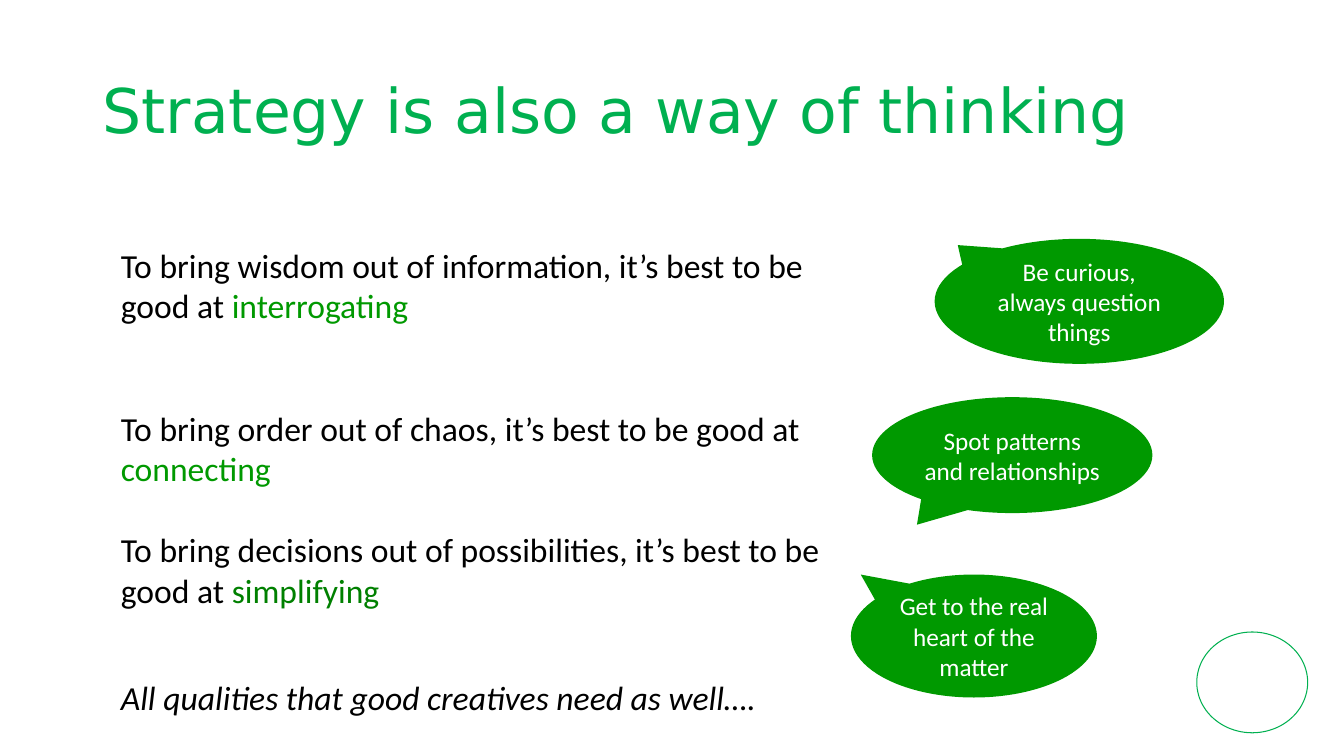
from dataclasses import dataclass

from pptx import Presentation
from pptx.dml.color import RGBColor
from pptx.enum.shapes import MSO_SHAPE as Shape
from pptx.enum.text import MSO_ANCHOR as Anchor, PP_ALIGN as Align
from pptx.util import Inches, Pt


@dataclass(frozen=True)
class Theme:
    title_green: str = "00B050"
    green: str = "009900"
    dark_green: str = "008000"
    black: str = "000000"
    white: str = "FFFFFF"
    title_font: str = "DejaVu Sans"
    body_font: str = "Calibri"
    title_size: int = 44
    body_size: int = 24
    callout_size: int = 18
    body_line: float = 29.3


THEME = Theme()

# Opening words, quality, its colour, blank lines above
QUALITIES = [
    ("To bring wisdom out of information, it’s best to be good at ",
     "interrogating", THEME.green, 0),
    ("To bring order out of chaos, it’s best to be good at ",
     "connecting", THEME.green, 2),
    ("To bring decisions out of possibilities, it’s best to be good at ",
     "simplifying", THEME.dark_green, 1),
]

# Advice, place, tail tip relative to the centre
CALLOUTS = [
    ("Be curious, always question things", (9.27, 2.37, 2.87, 1.24), (-0.42, -0.45)),
    ("Spot patterns and relationships", (8.65, 3.94, 2.78, 1.15), (-0.34, 0.6)),
    ("Get to the real heart of the matter", (8.44, 5.7, 2.44, 1.22), (-0.46, -0.5)),
]


def write(paragraph, text, *, size=THEME.body_size, font=THEME.body_font,
          color=THEME.black, italic=False):
    run = paragraph.add_run()
    run.text = text
    run.font.size = Pt(size)
    run.font.name = font
    run.font.italic = italic
    run.font.color.rgb = RGBColor.from_string(color)


def add_text_frame(slide, place, anchor=Anchor.TOP):
    frame = slide.shapes.add_textbox(*map(Inches, place)).text_frame
    frame.word_wrap = True
    frame.vertical_anchor = anchor
    return frame


def add_plain_shape(slide, kind, place):
    """Add a preset shape with neither shadow, fill nor outline."""
    shape = slide.shapes.add_shape(kind, *map(Inches, place))
    shape.shadow.inherit = False
    shape.fill.background()
    shape.line.fill.background()
    return shape


def add_title(slide, text):
    heading = add_text_frame(slide, (0.92, 0.4, 11.5, 1.45), Anchor.MIDDLE).paragraphs[0]
    heading.line_spacing = 0.9
    write(heading, text, size=THEME.title_size, font=THEME.title_font,
          color=THEME.title_green)


def add_qualities(slide):
    frame = add_text_frame(slide, (1.1, 2.38, 7.48, 3.74))
    for index, (opening, quality, color, blank_lines) in enumerate(QUALITIES):
        sentence = frame.add_paragraph() if index else frame.paragraphs[0]
        if blank_lines:
            sentence.space_before = Pt(blank_lines * THEME.body_line)
        write(sentence, opening)
        write(sentence, quality, color=color)


def add_callout(slide, advice, place, tail):
    bubble = add_plain_shape(slide, Shape.OVAL_CALLOUT, place)
    bubble.adjustments[0], bubble.adjustments[1] = tail
    bubble.fill.solid()
    bubble.fill.fore_color.rgb = RGBColor.from_string(THEME.green)
    frame = bubble.text_frame
    frame.word_wrap = True
    frame.vertical_anchor = Anchor.MIDDLE
    frame.paragraphs[0].alignment = Align.CENTER
    write(frame.paragraphs[0], advice, size=THEME.callout_size, color=THEME.white)


def add_corner_mark(slide):
    mark = add_plain_shape(slide, Shape.OVAL, (11.87, 6.27, 1.1, 1))
    mark.line.color.rgb = RGBColor.from_string(THEME.title_green)
    mark.line.width = Pt(0.75)


def main():
    deck = Presentation()
    deck.slide_width, deck.slide_height = Inches(13.33), Inches(7.5)
    slide = deck.slides.add_slide(deck.slide_layouts[6])

    add_corner_mark(slide)
    add_title(slide, "Strategy is also a way of thinking")
    closing = add_text_frame(slide, (1.1, 6.67, 9.12, 0.5))
    write(closing.paragraphs[0], "All qualities that good creatives need as well….",
          italic=True)
    add_qualities(slide)
    for advice, place, tail in CALLOUTS:
        add_callout(slide, advice, place, tail)

    deck.save("out.pptx")


if __name__ == "__main__":
    main()
